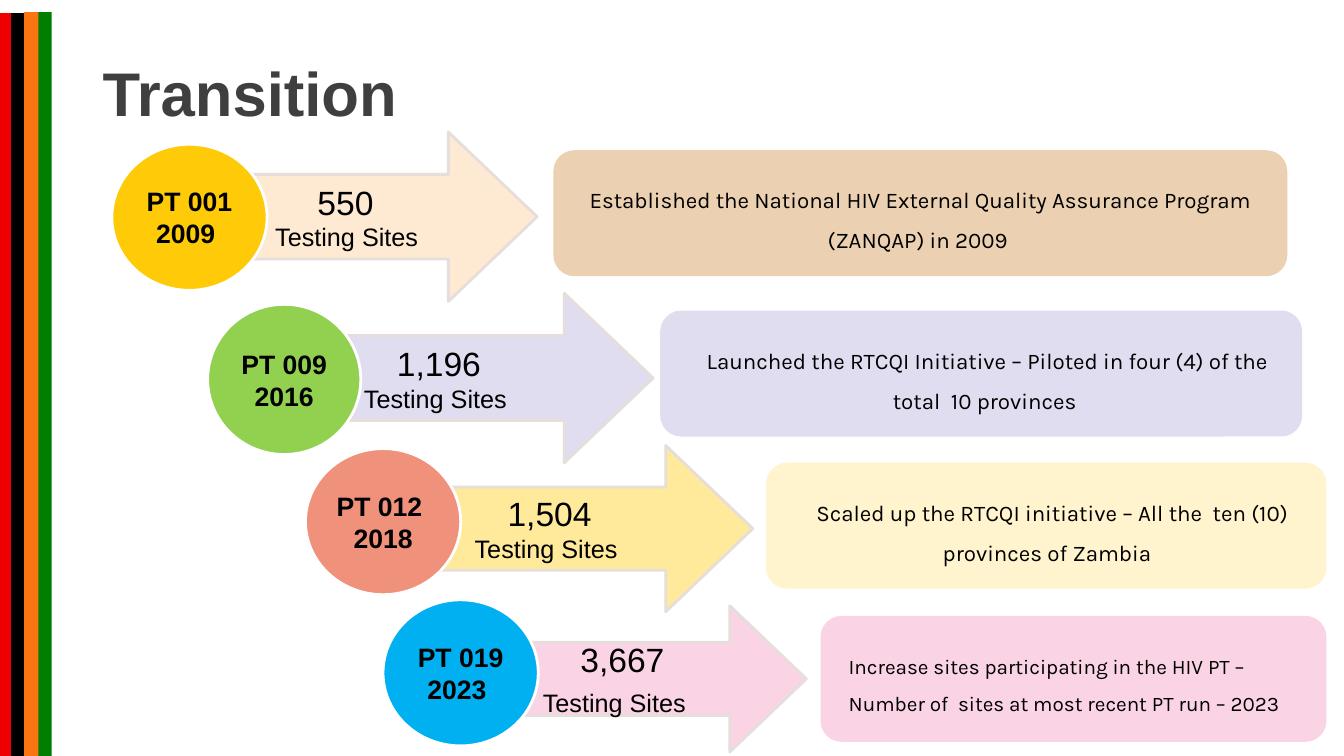
"""Build the Transition slide of testing rounds."""
from dataclasses import dataclass

from pptx import Presentation
from pptx.dml.color import RGBColor as Rgb
from pptx.enum.shapes import MSO_SHAPE as Shape
from pptx.enum.text import MSO_ANCHOR as Anchor, PP_ALIGN as Align
from pptx.util import Pt


@dataclass(frozen=True)
class Theme:
    """Fonts, type sizes and shared colours of the slide."""
    sans: str = "Arial"
    body: str = "Karla"
    title_size: float = 44
    number_size: float = 24
    label_size: float = 18
    round_size: float = 19
    note_size: float = 16
    small_note_size: float = 14.8
    ink: str = "000000"
    title_ink: str = "3F3F3F"
    arrow_edge: str = "E5DEDB"
    circle_edge: str = "FFFFFF"


class Slide:
    """The current page and the style used to draw on it."""

    def __init__(self, page, theme):
        """Keep the page and the theme."""
        self.page, self.theme = page, theme

    def shape(self, kind, place, fill, edge=None):
        """Add a filled preset shape."""
        box = self.page.shapes.add_shape(kind, *map(Pt, place))
        box.shadow.inherit = False
        box.fill.solid()
        box.fill.fore_color.rgb = Rgb.from_string(fill)
        if edge:
            box.line.color.rgb = Rgb.from_string(edge)
            box.line.width = Pt(2)
        else:
            box.line.fill.background()
        return box

    def set_text(self, box, lines, font, color=None, bold=False, align=Align.CENTER,
                 spacing=None, insets=(0, 0, 0, 0)):
        """Fill a box with lines, each a list of (text, size) spans."""
        frame = box.text_frame
        frame.word_wrap = True
        frame.vertical_anchor = Anchor.MIDDLE
        (frame.margin_left, frame.margin_top,
         frame.margin_right, frame.margin_bottom) = map(Pt, insets)
        for index, spans in enumerate(lines):
            para = frame.add_paragraph() if index else frame.paragraphs[0]
            para.alignment = align
            para.line_spacing = spacing
            for text, size in spans:
                span = para.add_run()
                span.text = text
                span.font.name, span.font.size, span.font.bold = font, Pt(size), bold
                span.font.color.rgb = Rgb.from_string(color or self.theme.ink)

    def title(self, place, text):
        """Add the slide title."""
        box = self.page.shapes.add_textbox(*map(Pt, place))
        self.set_text(box, [[(text, self.theme.title_size)]], self.theme.sans,
                      self.theme.title_ink, True, Align.LEFT, 0.9, (7.2, 3.6, 7.2, 3.6))

    def arrow(self, place, fill, lines):
        """Add an arrow with the number of sites."""
        box = self.shape(Shape.RIGHT_ARROW, place, fill, self.theme.arrow_edge)
        box.adjustments[0], box.adjustments[1] = 0.5, 0.524
        self.set_text(box, lines, self.theme.sans)

    def circle(self, place, fill, lines):
        """Add a circle with the round and its year."""
        box = self.shape(Shape.OVAL, place, fill, self.theme.circle_edge)
        self.set_text(box, [[(line, self.theme.round_size)] for line in lines],
                      self.theme.sans, bold=True)

    def note(self, place, fill, text, size, align, insets):
        """Add a rounded box with an explanation."""
        box = self.shape(Shape.ROUNDED_RECTANGLE, place, fill)
        self.set_text(box, [[(text, size)]], self.theme.body, align=align,
                      spacing=1.5, insets=insets)


THEME = Theme()
WIDTH, HEIGHT = 960, 540
NOTE_HEIGHT = 90
PLAIN, INDENTED = (0, 0, 0, 0), (15.8, 3.6, 7.2, 3.6)
NUMBER, LABEL, NOTE = THEME.number_size, THEME.label_size, THEME.note_size
SITES = ("Testing Sites ", LABEL)

STRIPES = [
    (25.2, 8.6, 11.7, "007E00"),
    (0, 9.4, 17.3, "EE0000"),
    (7.9, 9.4, 10.1, "000000"),
    (17.3, 8.6, 10.1, "FA7512"),
]
ARROWS = [
    ((148.3, 94.3, 235.4, 121), "FEE9D2", [[("550 ", NUMBER)], [SITES]]),
    ((192.2, 209.5, 274.3, 121), "E1DDF1", [[("1,196", NUMBER)], [SITES]]),
    ((278.6, 318.2, 259.2, 118.8), "FFEA9C", [[("1,504", NUMBER)], [SITES]]),
    ((340.6, 432.7, 235.4, 104.4), "FAD4E5",
     [[("3,667", NUMBER)], [SITES, (" ", NUMBER)]]),
]
CIRCLES = [
    ((79.9, 103, 110.9, 104.4), "FFCA08", ["PT 001", "2009 "]),
    ((148.3, 217.4, 109.4, 107.3), "92D050", ["PT 009", "2016"]),
    ((218.2, 320.4, 110.9, 104.4), "F0917B", ["PT 012 ", "2018"]),
    ((273.6, 428.4, 110.9, 104.4), "00B0F0", ["PT 019", "2023 "]),
]
NOTES = [
    ((395.3, 107.3, 524.2, NOTE_HEIGHT), "EBD1B2",
     "Established the National HIV External Quality Assurance Program (ZANQAP) in 2009 ",
     NOTE, Align.CENTER, PLAIN),
    ((471.6, 221.8, 458.6, NOTE_HEIGHT), "E1DDF1",
     "Launched the RTCQI Initiative – Piloted in four (4) of the total  10 provinces ",
     NOTE, Align.CENTER, INDENTED),
    ((547.2, 330.5, 400.3, NOTE_HEIGHT), "FFF4CE",
     "Scaled up the RTCQI initiative – All the  ten (10) provinces of Zambia  ",
     NOTE, Align.CENTER, INDENTED),
    ((586.1, 439.9, 361.4, NOTE_HEIGHT), "FAD4E5",
     "Increase sites participating in the HIV PT – "
     "Number of  sites at most recent PT run – 2023",
     THEME.small_note_size, Align.LEFT, INDENTED),
]


def main():
    """Draw the slide and save the deck."""
    deck = Presentation()
    deck.slide_width, deck.slide_height = Pt(WIDTH), Pt(HEIGHT)
    slide = Slide(deck.slides.add_slide(deck.slide_layouts[6]), THEME)
    for left, top, width, fill in STRIPES:
        slide.shape(Shape.RECTANGLE, (left, top, width, HEIGHT - top), fill)
    slide.title((66.2, 16.6, 828, 104.4), "Transition")
    for arrow, circle, note in zip(ARROWS, CIRCLES, NOTES):
        slide.arrow(*arrow)
        slide.circle(*circle)
        slide.note(*note)
    deck.save("out.pptx")


if __name__ == "__main__":
    main()
